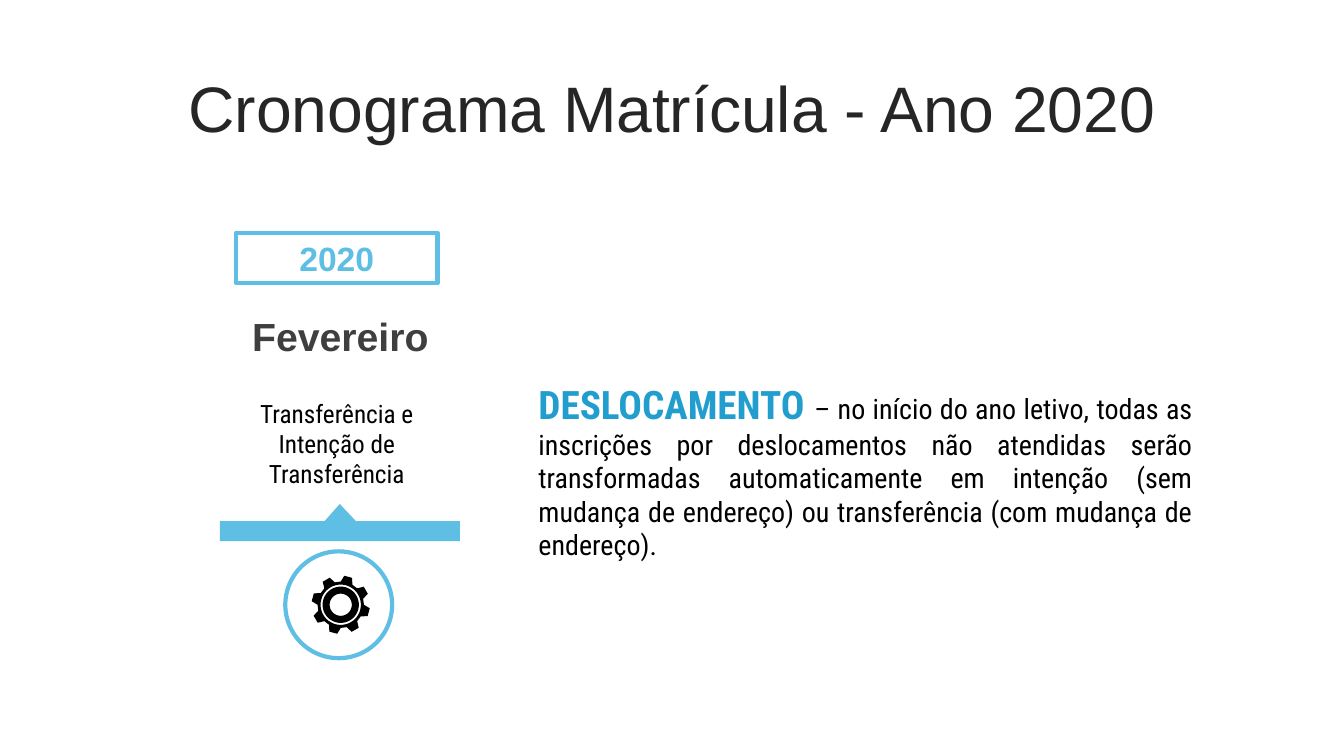
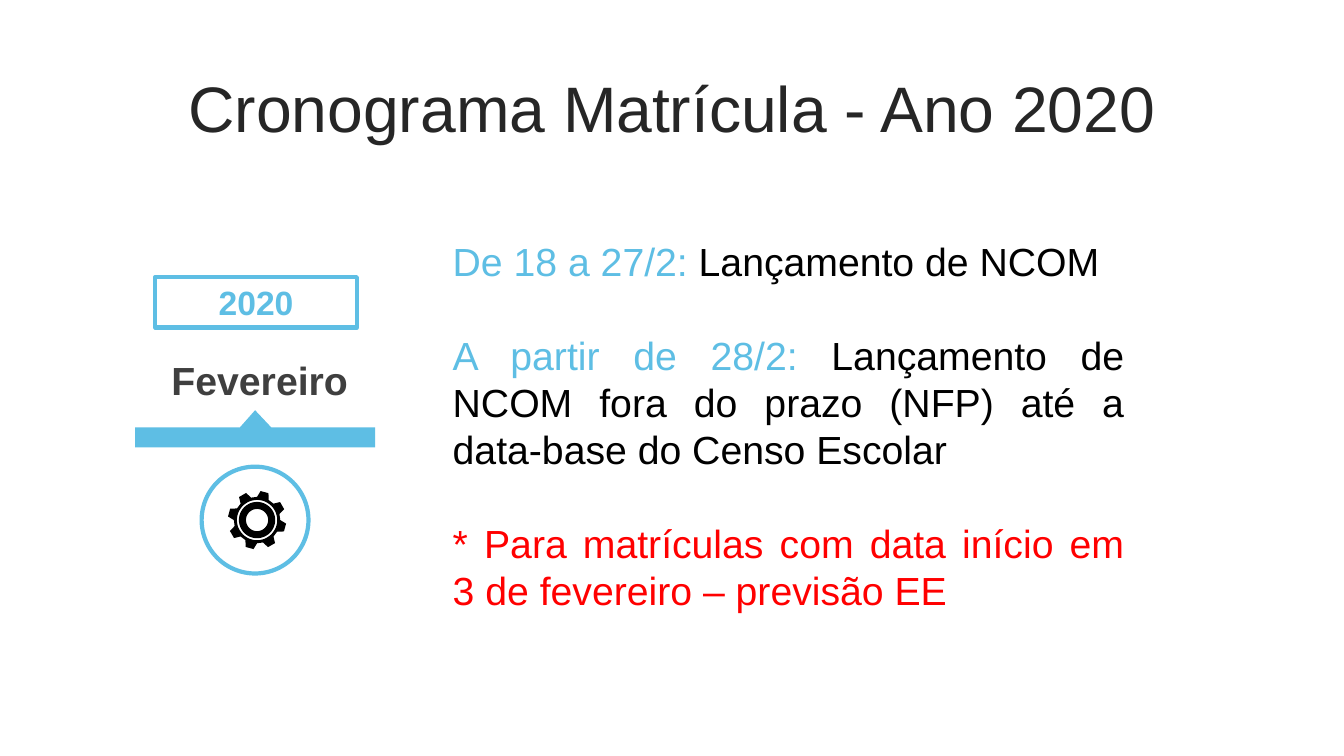
"""Build two slides with the 2020 school enrolment schedule."""
from math import cos, radians, sin

from lxml.etree import SubElement
from pptx import Presentation
from pptx.dml.color import RGBColor
from pptx.enum.shapes import MSO_SHAPE
from pptx.enum.text import MSO_ANCHOR, MSO_AUTO_SIZE, PP_ALIGN
from pptx.oxml.ns import qn
from pptx.util import Inches, Pt

COLORS = {
    "sky": "5EBEE4",
    "blue": "229ECE",
    "title": "262626",
    "month": "3F3F3F",
    "black": "000000",
    "red": "FF0000",
}
ARIAL = "Arial"
CONDENSED = "Roboto Condensed"
TITLE = "Cronograma Matrícula - Ano 2020"


def color(name):
    return RGBColor.from_string(COLORS[name])


def polar(center, radius, degrees):
    x, y = center
    angle = radians(degrees)
    return Inches(x + radius * sin(angle)), Inches(y - radius * cos(angle))


def ring(center, radius, steps=48):
    return [polar(center, radius, 360 * step / steps) for step in range(steps)]


class Schedule:
    def __init__(self):
        self.deck = Presentation()
        self.deck.slide_width = Inches(13.33)
        self.deck.slide_height = Inches(7.5)
        self.slide = None

    def add_slide(self):
        self.slide = self.deck.slides.add_slide(self.deck.slide_layouts[1])
        title = self.slide.shapes.title
        self.place(title, 1.7, 0.74, 9.93, 0.79)
        title.text_frame.text = TITLE
        self.set_frame(title.text_frame, MSO_ANCHOR.MIDDLE)
        heading = title.text_frame.paragraphs[0]
        heading.alignment = PP_ALIGN.CENTER
        heading.line_spacing = 0.8
        self.style(heading.runs[0], 45.9, "title", ARIAL)

    def place(self, shape, left, top, width, height):
        shape.left, shape.top = Inches(left), Inches(top)
        shape.width, shape.height = Inches(width), Inches(height)

    def set_frame(self, frame, anchor=MSO_ANCHOR.TOP):
        frame.word_wrap = True
        frame.auto_size = MSO_AUTO_SIZE.NONE
        frame.vertical_anchor = anchor

    def style(self, run, size, ink, font, bold=False):
        run.font.size = Pt(size)
        run.font.name = font
        run.font.bold = bold
        run.font.color.rgb = color(ink)

    def label(self, box, text, size, ink, font, bold=False):
        caption = self.slide.shapes.add_textbox(*map(Inches, box))
        self.center_text(caption, text, size, ink, font, bold)

    def center_text(self, shape, text, size, ink, font, bold):
        shape.text_frame.text = text
        self.set_frame(shape.text_frame)
        line = shape.text_frame.paragraphs[0]
        line.alignment = PP_ALIGN.CENTER
        self.style(line.runs[0], size, ink, font, bold)

    def outlined(self, preset, box):
        shape = self.slide.shapes.add_shape(preset, *map(Inches, box))
        shape.shadow.inherit = False
        shape.fill.background()
        shape.line.color.rgb = color("sky")
        shape.line.width = Pt(3)
        return shape

    def outline(self, contours, ink):
        first, *others = contours
        builder = self.slide.shapes.build_freeform(*first[0], scale=1.0)
        builder.add_line_segments(first[1:], close=True)
        for contour in others:
            builder.move_to(*contour[0])
            builder.add_line_segments(contour[1:], close=True)
        shape = builder.convert_to_shape()
        shape.shadow.inherit = False
        shape.fill.solid()
        shape.fill.fore_color.rgb = color(ink)
        shape.line.fill.background()

    def band(self, left, top):
        corners = [(0, 0.37), (0, 0.17), (1.04, 0.17), (1.19, 0),
                   (1.35, 0.17), (2.38, 0.17), (2.38, 0.37)]
        self.outline([[(Inches(left + x), Inches(top + y)) for x, y in corners]], "sky")

    def gear(self, center):
        tooth = [(-15, 0.23), (-8, 0.29), (8, 0.29), (15, 0.23)]
        teeth = [polar(center, radius, 15 + 45 * index + turn)
                 for index in range(8) for turn, radius in tooth]
        rings = [ring(center, radius) for radius in (0.2, 0.18, 0.11)]
        self.outline([teeth, *rings], "black")

    def month(self, year_at, band_at, icon_at):
        self.band(*band_at)
        year = self.outlined(MSO_SHAPE.RECTANGLE, (*year_at, 2, 0.5))
        self.center_text(year, "2020", 24, "sky", ARIAL, True)
        self.outlined(MSO_SHAPE.OVAL, (*icon_at, 1.06, 1.06))
        self.gear((icon_at[0] + 0.55, icon_at[1] + 0.53))
        name_box = (year_at[0] - 0.09, year_at[1] + 0.74, 2.25, 0.57)
        self.label(name_box, "Fevereiro", 28, "month", ARIAL, True)

    def body(self, box, items, gap=0):
        details = self.slide.placeholders[1]
        self.place(details, *box)
        frame = details.text_frame
        self.set_frame(frame)
        for index, pieces in enumerate(items):
            item = frame.add_paragraph() if index else frame.paragraphs[0]
            item.alignment = PP_ALIGN.JUSTIFY
            item.space_before = Pt(gap if index else 0)
            properties = item._p.get_or_add_pPr()
            properties.set("marL", "0")
            properties.set("indent", "0")
            SubElement(properties, qn("a:buNone"))
            for text, *look in pieces:
                run = item.add_run()
                run.text = text
                self.style(run, *look)


def main():
    schedule = Schedule()

    schedule.add_slide()
    schedule.month((2.34, 2.31), (2.18, 5), (2.83, 5.47))
    schedule.label((2.23, 3.9, 2.22, 1.01), "Transferência e Intenção de Transferência",
                   18, "black", CONDENSED)
    schedule.body((5.24, 3.72, 6.69, 1.92), [[
        ("DESLOCAMENTO ", 28, "blue", CONDENSED, True),
        ("– no início do ano letivo, todas as inscrições por deslocamentos não "
         "atendidas serão transformadas automaticamente em intenção (sem mudança "
         "de endereço) ou transferência (com mudança de endereço).",
         20, "black", CONDENSED),
    ]])

    schedule.add_slide()
    schedule.month((1.54, 2.75), (1.34, 4.07), (2, 4.63))
    schedule.body((4.39, 2.3, 6.86, 3.87), [
        [("De 18 a 27/2:", 28, "sky", ARIAL),
         (" Lançamento de NCOM", 28, "black", ARIAL)],
        [("A partir de 28/2:", 28, "sky", ARIAL),
         (" Lançamento de NCOM fora do prazo (NFP) até a data-base do Censo Escolar",
          28, "black", ARIAL)],
        [("* Para matrículas com data início em 3 de fevereiro – previsão EE",
          28, "red", ARIAL)],
    ], gap=33.6)

    schedule.deck.save("out.pptx")


if __name__ == "__main__":
    main()
